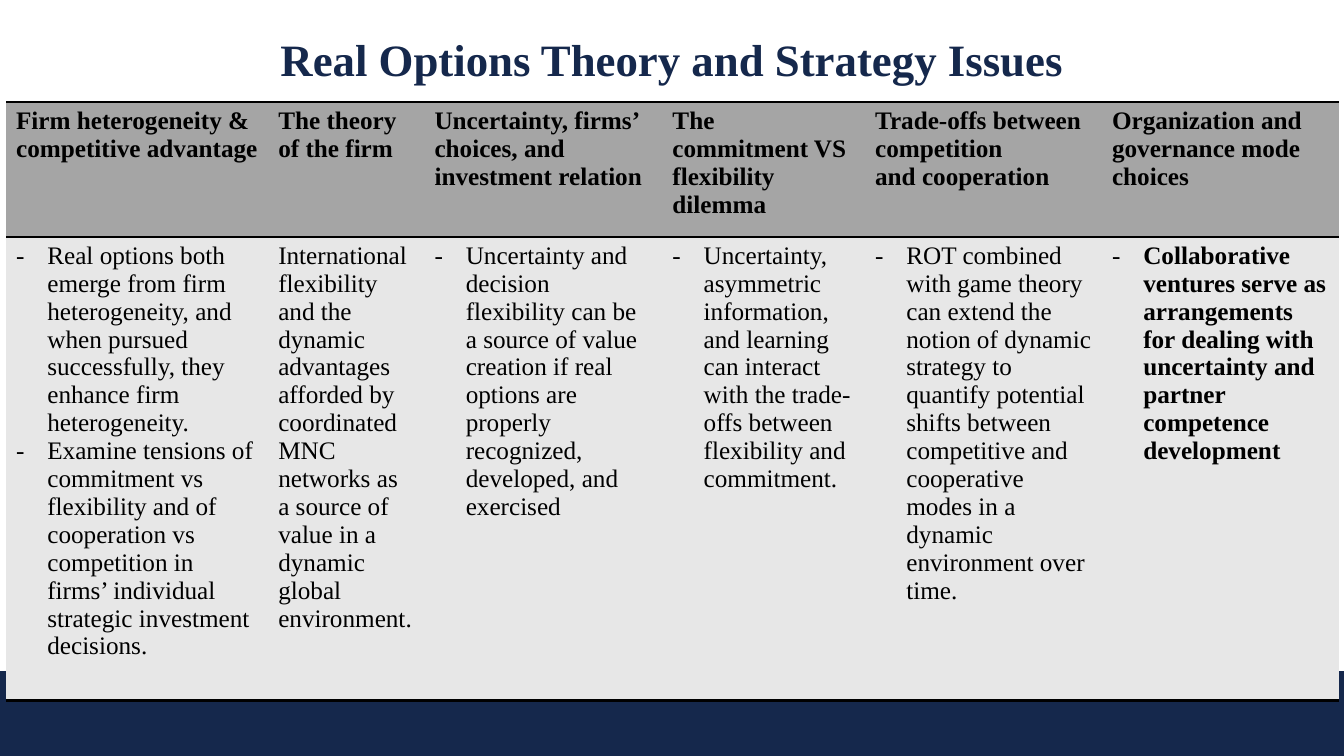
from lxml import etree
from pptx import Presentation
from pptx.dml.color import RGBColor
from pptx.enum.shapes import MSO_SHAPE
from pptx.enum.text import PP_ALIGN
from pptx.oxml.ns import qn
from pptx.util import Inches, Pt

RECT = MSO_SHAPE.RECTANGLE
LEFT, CENTER = PP_ALIGN.LEFT, PP_ALIGN.CENTER

COLORS = {
    "navy": "15284C",
    "black": "000000",
    "header": "A5A5A5",
    "body": "E7E7E7",
}
FONT = "Times New Roman"
INDENT = Inches(0.31)

# Each column: width, heading paragraphs, body paragraphs, dashed, bold body
COLUMNS = [
    (2.6, ["Firm heterogeneity &", "competitive advantage"],
     ["Real options both emerge from firm heterogeneity, and when pursued "
      "successfully, they enhance firm heterogeneity.",
      "Examine tensions of commitment vs flexibility and of cooperation vs "
      "competition in firms’ individual strategic investment decisions."],
     True, False),
    (1.55, ["The theory of the firm"],
     ["International flexibility and the dynamic advantages",
      "afforded by coordinated MNC networks as",
      "a source of value in a dynamic global environment."],
     False, False),
    (2.36, ["Uncertainty, firms’ choices, and investment relation"],
     ["Uncertainty and decision flexibility can be a source of value creation "
      "if real options are properly recognized, developed, and exercised"],
     True, False),
    (2.01, ["The commitment VS flexibility dilemma"],
     ["Uncertainty, asymmetric information, and learning can interact with "
      "the trade-offs between flexibility and commitment."],
     True, False),
    (2.35, ["Trade-offs between competition", "and cooperation"],
     ["ROT combined with game theory can extend the notion of dynamic strategy "
      "to quantify potential shifts between competitive and cooperative modes "
      "in a dynamic environment over time."],
     True, False),
    (2.35, ["Organization and governance mode choices"],
     ["Collaborative ventures serve as arrangements for dealing with "
      "uncertainty and partner competence development"],
     True, True),
]
ROW_HEIGHTS = [1.34, 4.6]


def rgb(name):
    return RGBColor.from_string(COLORS[name])


def write(tf, paragraphs, size=18, color="black", bold=False, align=LEFT,
          dashed=False):
    for i, text in enumerate(paragraphs):
        p = tf.paragraphs[0] if i == 0 else tf.add_paragraph()
        p.alignment = align
        if dashed:
            pPr = p._p.get_or_add_pPr()
            pPr.set("marL", str(INDENT))
            pPr.set("indent", str(-INDENT))
            etree.SubElement(pPr, qn("a:buFont"), typeface=FONT)
            etree.SubElement(pPr, qn("a:buChar"), char="-")
        r = p.add_run()
        r.text = text
        r.font.name = FONT
        r.font.size = Pt(size)
        r.font.bold = bold
        r.font.color.rgb = rgb(color)


class SlideBuilder:
    def __init__(self, slide):
        self.s = slide

    def bar(self, x, y, w, h, color):
        sp = self.s.shapes.add_shape(RECT, Inches(x), Inches(y), Inches(w), Inches(h))
        sp.shadow.inherit = False
        sp.fill.solid()
        sp.fill.fore_color.rgb = rgb(color)
        sp.line.color.rgb = rgb(color)
        sp.line.width = Pt(1)

    def text(self, x, y, w, h, text, **fmt):
        box = self.s.shapes.add_textbox(Inches(x), Inches(y), Inches(w), Inches(h))
        box.text_frame.word_wrap = True
        write(box.text_frame, [text], **fmt)

    def cell(self, cell, paragraphs, fill, **fmt):
        write(cell.text_frame, paragraphs, **fmt)
        cell.fill.solid()
        cell.fill.fore_color.rgb = rgb(fill)
        # Borders come before the fill: rules above and below, none at the sides
        tcPr = cell._tc.get_or_add_tcPr()
        for i, side in enumerate(["lnL", "lnR", "lnT", "lnB"]):
            ln = etree.Element(qn(f"a:{side}"), w=str(Pt(2)))
            if side in ("lnT", "lnB"):
                solid = etree.SubElement(ln, qn("a:solidFill"))
                etree.SubElement(solid, qn("a:srgbClr"), val=COLORS["black"])
            else:
                etree.SubElement(ln, qn("a:noFill"))
            tcPr.insert(i, ln)

    def table(self, x, y, columns, heights):
        width = sum(col[0] for col in columns)
        frame = self.s.shapes.add_table(
            len(heights), len(columns), Inches(x), Inches(y),
            Inches(width), Inches(sum(heights)))
        table = frame.table
        table.first_row = table.horz_banding = False
        for row, height in zip(table.rows, heights):
            row.height = Inches(height)
        for i, (w, heading, body, dashed, bold) in enumerate(columns):
            table.columns[i].width = Inches(w)
            self.cell(table.cell(0, i), heading, "header", bold=True)
            self.cell(table.cell(1, i), body, "body", bold=bold, dashed=dashed)


def main():
    prs = Presentation()
    prs.slide_width, prs.slide_height = Inches(13.33), Inches(7.5)
    s = SlideBuilder(prs.slides.add_slide(prs.slide_layouts[6]))

    # Footer band
    s.bar(0, 6.66, 13.33, 0.84, "navy")
    # Title
    s.text(0.06, 0.27, 13.21, 0.64, "Real Options Theory and Strategy Issues",
           size=32, color="navy", bold=True, align=CENTER)
    # Strategy issues table
    s.table(0.06, 1.01, COLUMNS, ROW_HEIGHTS)

    prs.save("out.pptx")


if __name__ == "__main__":
    main()
